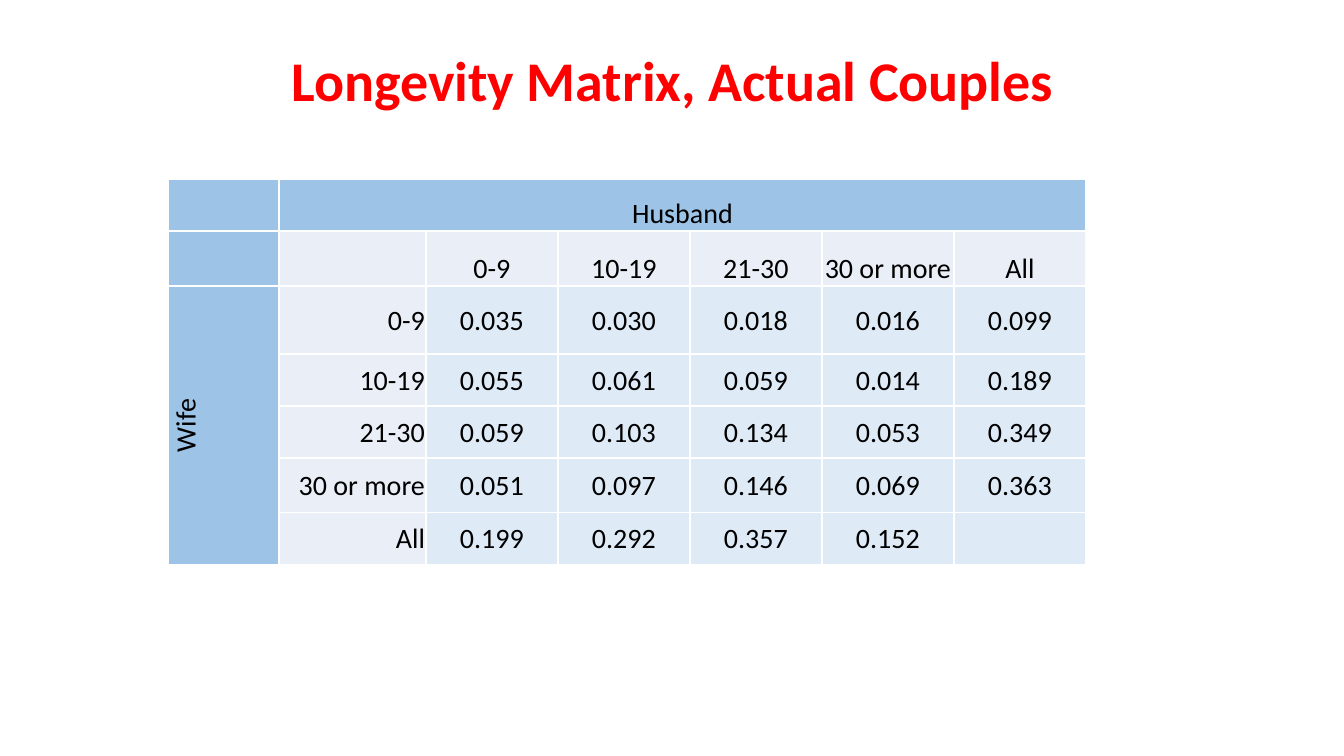
import lxml.etree
import pptx
import pptx.dml.color
import pptx.enum.text
import pptx.oxml.ns
import pptx.util

EMU_PER_PX = 914400 / 100.8
FONT = "Calibri"
COLORS = {
    "title": "FF0000",
    "text": "000000",
    "border": "FFFFFF",
    "band": "9DC3E6",
    "label": "EAEFF7",
    "value": "DEEBF7",
}

ALIGN = pptx.enum.text.PP_ALIGN
ANCHOR = pptx.enum.text.MSO_ANCHOR

# Table content: an empty string is an empty cell
LIFESPANS = ["0-9", "10-19", "21-30", "30 or more", "All"]
SHARES = [
    ["0.035", "0.030", "0.018", "0.016", "0.099"],
    ["0.055", "0.061", "0.059", "0.014", "0.189"],
    ["0.059", "0.103", "0.134", "0.053", "0.349"],
    ["0.051", "0.097", "0.146", "0.069", "0.363"],
    ["0.199", "0.292", "0.357", "0.152", ""],
]
COLUMN_WIDTHS = [111, 147] + [132] * 5
ROW_HEIGHTS = [52, 55, 68, 52, 52, 55, 52]


def px(length):
    return pptx.util.Emu(round(length * EMU_PER_PX))


def color(name):
    return pptx.dml.color.RGBColor.from_string(COLORS[name])


def apply_format(target, values):
    for name, value in values.items():
        setattr(target, name, value)


def write_text(text_frame, text, alignment, size, color_name, bold=False):
    paragraph = text_frame.paragraphs[0]
    paragraph.alignment = alignment
    run = paragraph.add_run()
    run.text = text
    apply_format(run.font, {"name": FONT, "size": pptx.util.Pt(size), "bold": bold})
    run.font.color.rgb = color(color_name)
    return paragraph


def add_title(slide, text, left, top, width, height):
    text_frame = slide.shapes.add_textbox(px(left), px(top), px(width), px(height)).text_frame
    apply_format(text_frame, {"word_wrap": True, "vertical_anchor": ANCHOR.MIDDLE})
    paragraph = write_text(text_frame, text, ALIGN.CENTER, 40, "title", bold=True)
    paragraph.line_spacing = 0.9


def add_borders(cell):
    properties = cell._tc.get_or_add_tcPr()
    for side in ("a:lnL", "a:lnR", "a:lnT", "a:lnB"):
        line = lxml.etree.SubElement(
            properties, pptx.oxml.ns.qn(side), w=str(pptx.util.Pt(1)))
        fill = lxml.etree.SubElement(line, pptx.oxml.ns.qn("a:solidFill"))
        lxml.etree.SubElement(fill, pptx.oxml.ns.qn("a:srgbClr"), val=COLORS["border"])


def style_cell(cell, text, fill_name, alignment, anchor):
    # Borders come before the fill in the cell properties
    add_borders(cell)
    cell.fill.solid()
    cell.fill.fore_color.rgb = color(fill_name)
    if text:
        apply_format(cell, {
            "margin_left": px(1),
            "margin_right": px(1),
            "margin_top": px(1),
            "margin_bottom": 0,
            "vertical_anchor": anchor,
        })
        write_text(cell.text_frame, text, alignment, 20, "text")


def cell_fill(row, column):
    if row == 0 or column == 0:
        return "band"
    return "label" if row == 1 or column == 1 else "value"


def add_longevity_table(slide, left, top):
    rows = [["", "Husband"] + [""] * 5, ["", ""] + LIFESPANS]
    rows += [["", label] + shares for label, shares in zip(LIFESPANS, SHARES)]
    rows[2][0] = "Wife"

    frame = slide.shapes.add_table(
        len(ROW_HEIGHTS), len(COLUMN_WIDTHS), px(left), px(top),
        px(sum(COLUMN_WIDTHS)), px(sum(ROW_HEIGHTS)))
    table = frame.table
    apply_format(table, {"first_row": False, "horz_banding": False})
    for column, width in zip(table.columns, COLUMN_WIDTHS):
        column.width = px(width)
    for row, height in zip(table.rows, ROW_HEIGHTS):
        row.height = px(height)

    # Headings sit low, row labels lean right, values are centred
    for row, texts in enumerate(rows):
        for column, text in enumerate(texts):
            alignment = ALIGN.RIGHT if row > 1 and column == 1 else ALIGN.CENTER
            anchor = ANCHOR.BOTTOM if row < 2 or column == 0 else ANCHOR.MIDDLE
            style_cell(table.cell(row, column), text, cell_fill(row, column),
                       alignment, anchor)

    # Group headings for husband and wife
    table.cell(0, 1).merge(table.cell(0, 6))
    wife = table.cell(2, 0)
    wife.merge(table.cell(6, 0))
    wife._tc.get_or_add_tcPr().set("vert", "vert270")


def main():
    presentation = pptx.Presentation()
    apply_format(presentation, {"slide_width": px(1344), "slide_height": px(756)})
    slide = presentation.slides.add_slide(presentation.slide_layouts[6])
    add_title(slide, "Longevity Matrix, Actual Couples", 93, 40, 1159, 87)
    add_longevity_table(slide, 168, 179)
    presentation.save("out.pptx")


if __name__ == "__main__":
    main()
